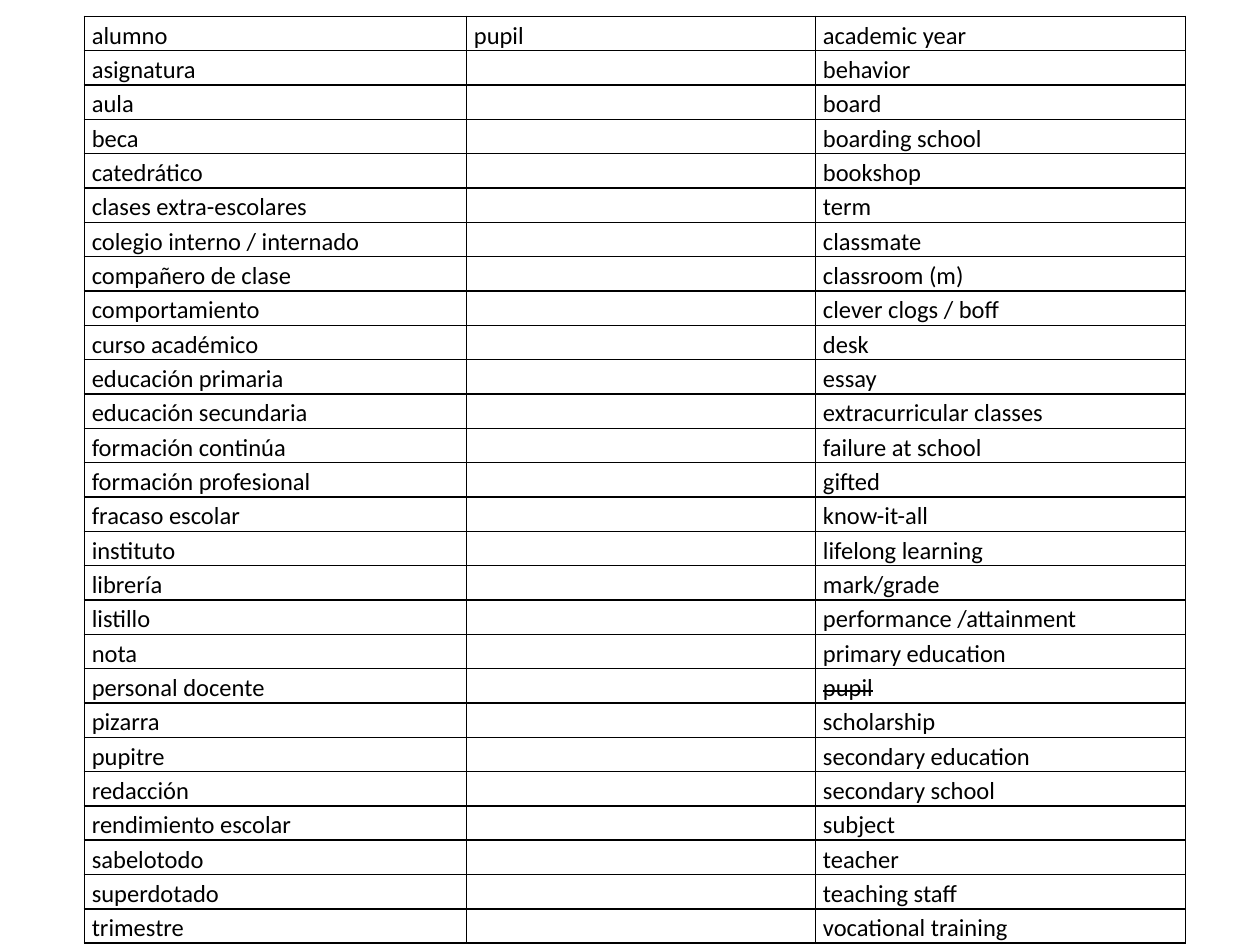
from pptx import Presentation, util as u
from pptx.dml.color import RGBColor
from pptx.oxml import parse_xml
from pptx.oxml.ns import nsdecls

LEFT = """alumno
asignatura
aula
beca
catedrático
clases extra-escolares
colegio interno / internado
compañero de clase
comportamiento
curso académico
educación primaria
educación secundaria
formación continúa
formación profesional
fracaso escolar
instituto
librería
listillo
nota
personal docente
pizarra
pupitre
redacción
rendimiento escolar
sabelotodo
superdotado
trimestre""".splitlines()

RIGHT = """academic year
behavior
board
boarding school
bookshop
term
classmate
classroom (m)
clever clogs / boff
desk
essay
extracurricular classes
failure at school
gifted
know-it-all
lifelong learning
mark/grade
performance /attainment
primary education
pupil
scholarship
secondary education
secondary school
subject
teacher
teaching staff
vocational training""".splitlines()

DONE = {"alumno": "pupil"}
INK = "000000"
PAD = {"margin_left": u.Cm(0.15), "margin_right": u.Cm(0.15),
       "margin_top": 0, "margin_bottom": 0}
FONT = {"name": "Calibri", "size": u.Pt(14), "bold": False}


def tint(code):
    """Turn a hex string into a colour."""
    return RGBColor.from_string(code)


def apply(item, look):
    """Set each attribute in a dict of format values."""
    for name, value in look.items():
        setattr(item, name, value)


def edge(cell):
    """Rule all four sides of a cell."""
    props = cell._tc.get_or_add_tcPr()
    for spot, side in enumerate("LRTB"):
        props.insert(spot, parse_xml(
            f'<a:ln{side} {nsdecls("a")} w="{u.Pt(1)}"><a:solidFill>'
            f'<a:srgbClr val="{INK}"/></a:solidFill></a:ln{side}>'))


def write(cell, word, struck):
    """Fill one cell with a word, or leave it empty at the same size."""
    apply(cell, PAD)
    cell.fill.background()
    edge(cell)
    para = cell.text_frame.paragraphs[0]
    para.line_spacing = 1.15
    if not word:
        size = int(FONT["size"].pt * 100)
        para._p.append(parse_xml(f'<a:endParaRPr {nsdecls("a")} sz="{size}"/>'))
        return
    run = para.add_run()
    run.text = word
    apply(run.font, FONT)
    run.font.color.rgb = tint(INK)
    if struck:
        run._r.get_or_add_rPr().set("strike", "sngStrike")


def match(slide, left, top, wide, high):
    """Place the vocabulary matching table in a box."""
    rows = [(word, DONE.get(word, ""), pick) for word, pick in zip(LEFT, RIGHT)]
    parts = (0.347, 0.317, 0.336)
    grid = slide.shapes.add_table(len(rows), len(parts), left, top, wide, high).table
    apply(grid, {"first_row": False, "horz_banding": False})
    for col, part in zip(grid.columns, parts):
        col.width = int(wide * part)
    for r, row in enumerate(rows):
        grid.rows[r].height = high // len(rows)
        for c, word in enumerate(row):
            write(grid.cell(r, c), word, c == 2 and word in DONE.values())


def main():
    """Build and save the slide."""
    deck = Presentation()
    apply(deck, {"slide_width": u.Cm(25.4), "slide_height": u.Cm(19.05)})
    slide = deck.slides.add_slide(deck.slide_layouts[6])
    match(slide, u.Cm(1.7), u.Cm(0.33), u.Cm(22.2), u.Cm(18.42))
    deck.save("out.pptx")


if __name__ == "__main__":
    main()
